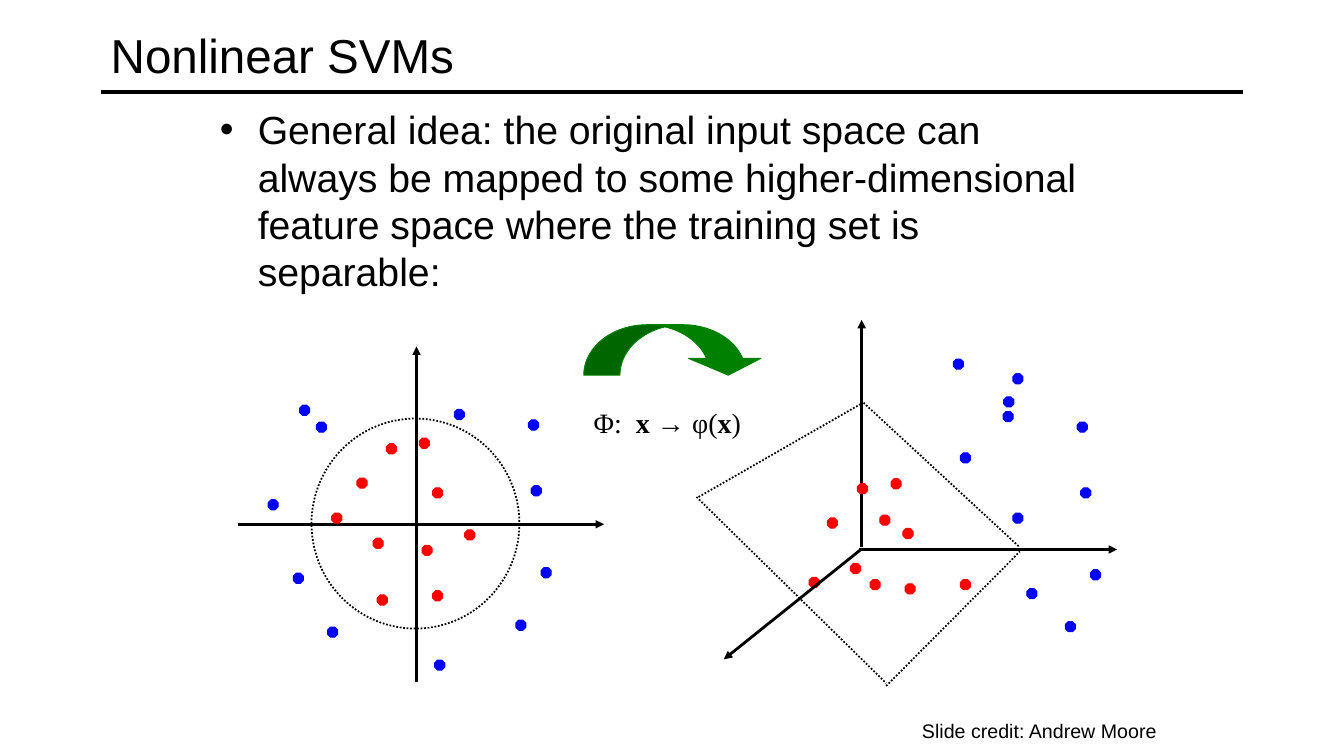
from pptx import Presentation
from pptx.dml.color import RGBColor
from pptx.enum.dml import MSO_LINE
from pptx.enum.shapes import MSO_CONNECTOR, MSO_SHAPE
from pptx.enum.text import MSO_ANCHOR
from pptx.oxml.ns import qn
from pptx.util import Pt
from lxml import etree

LINE = MSO_CONNECTOR.STRAIGHT
DOT, OVAL, ARC = MSO_SHAPE.OCTAGON, MSO_SHAPE.OVAL, MSO_SHAPE.CURVED_DOWN_ARROW
DOTTED = MSO_LINE.ROUND_DOT
TOP, MIDDLE = MSO_ANCHOR.TOP, MSO_ANCHOR.MIDDLE
BLACK, RED, BLUE, GREEN = "000000", "FF0000", "0000FF", "008000"


def color(code):
    return RGBColor.from_string(code)


class Board:
    sans, serif = "Arial", "Times New Roman"
    dot = 7.2

    def __init__(self, slide):
        self.slide = slide
        self.shapes = slide.shapes

    def line(self, start, end, width=2, arrow=False, dotted=False):
        link = self.shapes.add_connector(LINE, *map(Pt, start + end))
        link.line.width = Pt(width)
        link.line.color.rgb = color(BLACK)
        if dotted:
            link.line.dash_style = DOTTED
        if arrow:
            etree.SubElement(link.line._get_or_add_ln(), qn("a:tailEnd"), type="triangle")
        etree.SubElement(link._element.spPr, qn("a:effectLst"))

    def shape(self, kind, box, ink, fill=None, width=0.75, adjust=()):
        item = self.shapes.add_shape(kind, *map(Pt, box))
        item.shadow.inherit = False
        for i, value in enumerate(adjust):
            item.adjustments[i] = value
        if fill:
            item.fill.solid()
            item.fill.fore_color.rgb = color(fill)
        else:
            item.fill.background()
        item.line.color.rgb = color(ink)
        item.line.width = Pt(width)
        return item

    def dots(self, ink, spots):
        for x, y in spots:
            self.shape(DOT, (x, y, self.dot, self.dot), ink, ink, adjust=[0.293])

    def text(self, box, runs, size, font=sans, anchor=TOP, wrap=True, before=0):
        """Each run is (text, bold, extra letter spacing in points)."""
        frame = self.shapes.add_textbox(*map(Pt, box)).text_frame
        frame.word_wrap = wrap
        frame.vertical_anchor = anchor
        para = frame.paragraphs[0]
        para.space_before = Pt(before)
        for words, bold, gap in runs:
            run = para.add_run()
            run.text = words
            run.font.name = font
            run.font.size = Pt(size)
            run.font.bold = bold
            run.font.color.rgb = color(BLACK)
            if gap:
                run.font._element.set("spc", str(gap * 100))
        return para

    def bullet(self, para, indent):
        props = para._p.get_or_add_pPr()
        props.set("marL", str(Pt(indent)))
        props.set("indent", str(-Pt(indent)))
        etree.SubElement(props, qn("a:buFont"), typeface=self.sans)
        etree.SubElement(props, qn("a:buChar"), char="•")


def main():
    deck = Presentation()
    deck.slide_width, deck.slide_height = Pt(960), Pt(540)
    board = Board(deck.slides.add_slide(deck.slide_layouts[6]))

    # Title and rule
    board.line((72, 66), (888, 66), width=3)
    board.text((72, 6, 816, 66), [("Nonlinear SVMs", False, 0)], 34, anchor=MIDDLE)

    # Main statement
    idea = ("General idea: the original input space can always be mapped to some "
            "higher-dimensional feature space where the training set is separable:")
    para = board.text((150, 72, 636, 414), [(idea, False, 0)], 28, before=5.6)
    board.bullet(para, 27)

    # Input space: axes, points, circular boundary
    board.line((297.5, 487), (297.5, 247.5), arrow=True)
    board.line((170, 374.5), (431.5, 374.5), arrow=True)
    board.dots(RED, [(299.5, 313), (255, 341.5), (266.5, 384.5), (309, 422), (276, 317),
                     (237, 366.5), (269.5, 425), (309, 348.5), (332, 378.5), (301.5, 389.5)])
    board.dots(BLUE, [(379.5, 347), (368.5, 443), (191.5, 357), (310.5, 471.5),
                      (386.5, 405.5), (234, 448), (209.5, 409.5), (214, 289.5),
                      (324.5, 292.5), (226, 301.5), (377.5, 300)])
    circle = board.shape(OVAL, (222.5, 299, 148.5, 150), BLACK, width=1.25)
    circle.line.dash_style = DOTTED

    # Feature space: axes, points, separating plane
    board.line((615.5, 391), (615.5, 228.5), arrow=True)
    board.line((613.5, 392.5), (798, 392.5), arrow=True)
    board.dots(RED, [(636.5, 342), (591, 370), (621.5, 414), (686, 414), (612.5, 345.5),
                     (628.5, 368), (646.5, 417), (645, 377.5), (607.5, 402.5), (578, 412.5)])
    board.dots(BLUE, [(772, 348.5), (761, 444), (723.5, 267), (723.5, 366.5), (779, 407),
                      (686, 323.5), (733.5, 420.5), (717, 283.5), (716.5, 294),
                      (681, 256.5), (769.5, 301.5)])
    board.line((615, 392.5), (517, 471), arrow=True)
    for start, end in [((615, 286), (728.5, 391)), ((633, 490), (728.5, 394)),
                       ((499, 355), (615, 288.5)), ((497.5, 355), (633, 488))]:
        board.line(start, end, width=1.25, dotted=True)

    # Mapping between the spaces
    board.shape(ARC, (417, 232, 129, 36), GREEN, GREEN, adjust=[0.717, 1.433, 0.333])
    board.text((417, 286, 150, 31),
               [("Φ:", False, 0), (" ", False, 5), ("x → ", True, 0), ("φ(", False, 0),
                ("x", True, 0), (")", False, 0)], 20, font=board.serif, before=10)

    # Credit
    board.text((651.5, 510, 182, 24), [("Slide credit: Andrew Moore", False, 0)], 14, wrap=False)

    deck.save("out.pptx")


if __name__ == "__main__":
    main()
